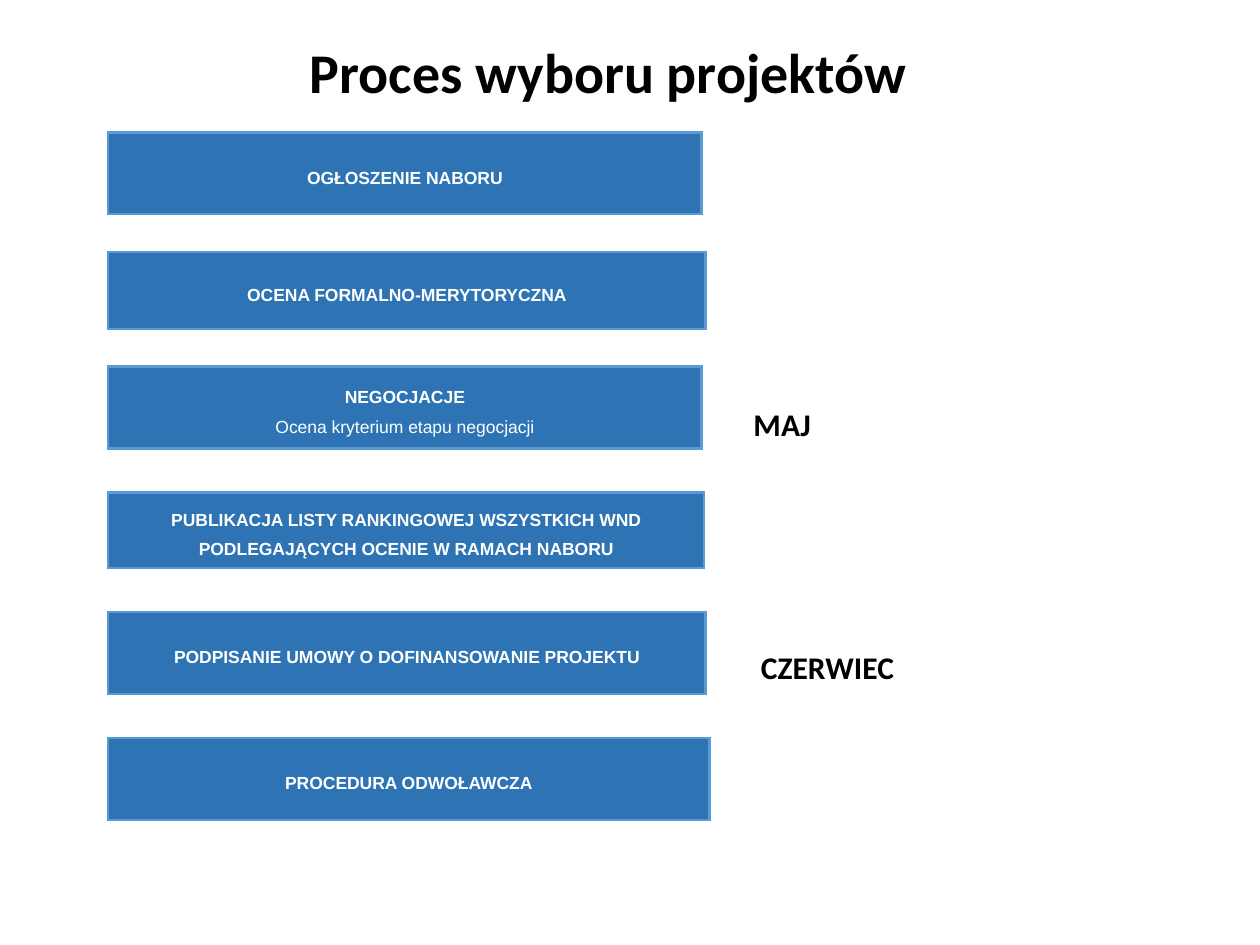
from lxml.etree import SubElement
from pptx import Presentation
from pptx.dml.color import RGBColor
from pptx.enum.text import MSO_ANCHOR, MSO_AUTO_SIZE, PP_ALIGN
from pptx.oxml.ns import qn
from pptx.util import Cm, Pt

BLACK = RGBColor(0x00, 0x00, 0x00)
WHITE = RGBColor(0xFF, 0xFF, 0xFF)
STEP_FILL = RGBColor(0x2E, 0x74, 0xB5)
STEP_BORDER = RGBColor(0x5B, 0x9B, 0xD5)

TITLE_FONT = {"name": "Calibri", "size": Pt(32), "bold": True}
STEP_FONT = {"name": "Arial", "size": Pt(10), "bold": True}
DETAIL_FONT = {**STEP_FONT, "bold": False}
MONTH_FONT = {"name": "Calibri", "size": Pt(18), "bold": True}
STEP_CELL = {
    "margin_left": Cm(0.18), "margin_right": Cm(0.18),
    "margin_top": 0, "margin_bottom": 0,
    "vertical_anchor": MSO_ANCHOR.MIDDLE,
}
STEP_LEFT = 2.18

STEPS = [
    (2.67, 1.65, (11.96, 2.97), ["OGŁOSZENIE NABORU"]),
    (5.08, 1.55, (12.04, 3.84), ["OCENA FORMALNO-MERYTORYCZNA"]),
    (7.39, 1.65, (11.96, 0.79), ["NEGOCJACJE", "Ocena kryterium etapu negocjacji"]),
    (9.93, 1.52, (12.01, 0.46),
     ["PUBLIKACJA LISTY RANKINGOWEJ WSZYSTKICH WND PODLEGAJĄCYCH OCENIE W RAMACH NABORU"]),
    (12.34, 1.65, (12.04,), ["PODPISANIE UMOWY O DOFINANSOWANIE PROJEKTU"]),
    (14.88, 1.65, (12.12, 0.64), ["PROCEDURA ODWOŁAWCZA"]),
]
MONTHS = [(14.94, 8.05, "MAJ"), (15.09, 12.93, "CZERWIEC")]


def apply_format(target, values):
    for name, value in values.items():
        setattr(target, name, value)


class ProcessSlide:
    def __init__(self, deck):
        self.page = deck.slides.add_slide(deck.slide_layouts[5])

    def add_span(self, para, text, font, color):
        span = para.add_run()
        span.text = text
        apply_format(span.font, font)
        span.font.color.rgb = color

    def title(self, text):
        box = self.page.shapes.title
        apply_format(box, {"left": Cm(5.99), "top": Cm(0.38),
                           "width": Cm(17.65), "height": Cm(2.26)})
        frame = box.text_frame
        apply_format(frame, {"vertical_anchor": MSO_ANCHOR.MIDDLE, "word_wrap": True,
                             "auto_size": MSO_AUTO_SIZE.NONE})
        para = frame.paragraphs[0]
        apply_format(para, {"alignment": PP_ALIGN.LEFT, "line_spacing": 0.9})
        self.add_span(para, text, TITLE_FONT, BLACK)

    def borders(self, cell, visible_sides):
        properties = cell._tc.get_or_add_tcPr()
        for position, side in enumerate("LRTB"):
            line = properties.makeelement(qn(f"a:ln{side}"), {"w": str(Pt(1.5))})
            properties.insert(position, line)
            if side in visible_sides:
                fill = SubElement(line, qn("a:solidFill"))
                SubElement(fill, qn("a:srgbClr"), val=str(STEP_BORDER))
            else:
                SubElement(line, qn("a:noFill"))

    def step(self, top, height, widths, lines):
        table = self.page.shapes.add_table(
            1, len(widths), Cm(STEP_LEFT), Cm(top), Cm(sum(widths)), Cm(height)).table
        apply_format(table, {"first_row": False, "horz_banding": False})
        for column, width in zip(table.columns, widths):
            column.width = Cm(width)
        cell, *side_cells = table.rows[0].cells
        apply_format(cell, STEP_CELL)
        cell.fill.solid()
        cell.fill.fore_color.rgb = STEP_FILL
        self.borders(cell, "LRTB")
        for side_cell in side_cells:
            side_cell.fill.background()
            self.borders(side_cell, "L")
        para = cell.text_frame.paragraphs[0]
        apply_format(para, {"alignment": PP_ALIGN.CENTER, "line_spacing": 1.5})
        heading, *details = lines
        self.add_span(para, heading, STEP_FONT, WHITE)
        for detail in details:
            para.add_line_break()
            self.add_span(para, detail, DETAIL_FONT, WHITE)

    def month(self, left, top, text):
        box = self.page.shapes.add_textbox(Cm(left), Cm(top), Cm(5.3), Cm(1.02))
        frame = box.text_frame
        apply_format(frame, {"word_wrap": True, "auto_size": MSO_AUTO_SIZE.SHAPE_TO_FIT_TEXT})
        self.add_span(frame.paragraphs[0], text, MONTH_FONT, BLACK)


def main():
    deck = Presentation()
    apply_format(deck, {"slide_width": Cm(25.4), "slide_height": Cm(19.05)})
    slide = ProcessSlide(deck)
    slide.title("Proces wyboru projektów")
    for step in STEPS:
        slide.step(*step)
    for month in MONTHS:
        slide.month(*month)
    deck.save("out.pptx")


if __name__ == "__main__":
    main()
